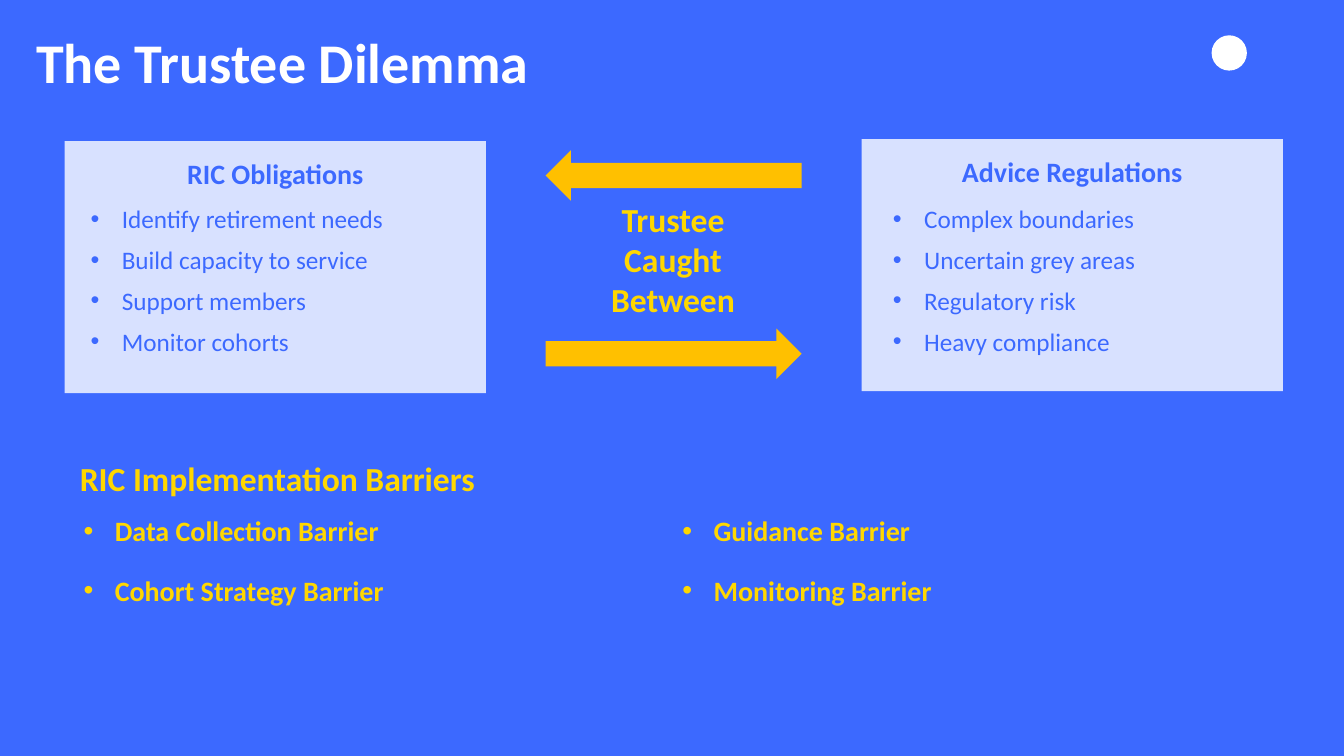
"""Build the slide on the trustee dilemma."""
from dataclasses import dataclass
from typing import NamedTuple

from lxml import etree
from pptx import Presentation
from pptx.dml.color import RGBColor
from pptx.enum.shapes import MSO_SHAPE
from pptx.enum.text import MSO_ANCHOR, MSO_AUTO_SIZE, PP_ALIGN
from pptx.oxml.ns import qn
from pptx.util import Inches, Pt

RECT, OVAL = MSO_SHAPE.RECTANGLE, MSO_SHAPE.OVAL
BACK, AHEAD = MSO_SHAPE.LEFT_ARROW, MSO_SHAPE.RIGHT_ARROW
LEFT, CENTER = PP_ALIGN.LEFT, PP_ALIGN.CENTER
TOP, FIXED = MSO_ANCHOR.TOP, MSO_AUTO_SIZE.NONE
WIDE, HIGH = Inches(13.33), Inches(7.5)
INDENT = Inches(0.31)


@dataclass(frozen=True)
class Theme:
    """Hold the colours, font and type sizes."""
    blue: str = "3C69FF"
    pale: str = "D8E1FF"
    white: str = "FFFFFF"
    gold: str = "FFD700"
    amber: str = "FFC000"
    font: str = "Calibri"
    title: float = 40
    head: float = 24
    label: float = 20
    body: float = 18


class Box(NamedTuple):
    """Give a place in percent of the slide's width and height."""
    x: float
    y: float
    w: float
    h: float

    def emu(self) -> tuple[int, ...]:
        """Turn the shares into slide units."""
        sides = (WIDE, HIGH, WIDE, HIGH)
        return tuple(round(side * part / 100) for side, part in zip(sides, self))


class Card(NamedTuple):
    """Describe a pale card with a heading and a list."""
    x: float
    y: float
    head: str
    items: tuple[str, ...]
    list_x: float
    list_w: float


class Arrow(NamedTuple):
    """Describe a block arrow by its kind and height on the slide."""
    kind: MSO_SHAPE
    y: float


THEME = Theme()
CARDS = (
    Card(4.8, 18.67, "RIC Obligations",
         ("Identify retirement needs", "Build capacity to service",
          "Support members", "Monitor cohorts"), 6, 28.9),
    Card(64.1, 18.4, "Advice Regulations",
         ("Complex boundaries", "Uncertain grey areas",
          "Regulatory risk", "Heavy compliance"), 65.7, 28.1),
)
ARROWS = (Arrow(BACK, 19.87), Arrow(AHEAD, 43.47))
BLOCKS = (("Data Collection Barrier", "Guidance Barrier"),
          ("Cohort Strategy Barrier", "Monitoring Barrier"))


def write(frame, *lines: str, size: float, color: str, bold: bool = False,
          align: PP_ALIGN = LEFT, after: float = 0, bullet: bool = False) -> None:
    """Fill a text frame with one paragraph for each line."""
    frame.word_wrap = True
    frame.auto_size = FIXED
    frame.vertical_anchor = TOP
    for index, line in enumerate(lines):
        para = frame.add_paragraph() if index else frame.paragraphs[0]
        para.text = line
        para.alignment = align
        para.space_after = Pt(after)
        for run in para.runs:
            font = run.font
            font.name, font.size, font.bold = THEME.font, Pt(size), bold
            font.color.rgb = RGBColor.from_string(color)
        if bullet:
            props = para._p.get_or_add_pPr()
            props.set("marL", str(INDENT))
            props.set("indent", str(-INDENT))
            etree.SubElement(props, qn("a:buFont"), typeface="Arial")
            etree.SubElement(props, qn("a:buChar"), char="•")


def label(slide, box: Box, *lines: str, **style) -> None:
    """Add a text box with formatted lines."""
    write(slide.shapes.add_textbox(*box.emu()).text_frame, *lines, **style)


def block(slide, kind: MSO_SHAPE, box: Box, color: str) -> None:
    """Add a flat filled shape."""
    shape = slide.shapes.add_shape(kind, *box.emu())
    shape.shadow.inherit = False
    shape.fill.solid()
    shape.fill.fore_color.rgb = RGBColor.from_string(color)
    shape.line.fill.background()


def add_title(slide, text: str) -> None:
    """Place and format the title."""
    title = slide.shapes.title
    title.left, title.top, title.width, title.height = Box(2.7, 4.67, 94.8, 7.33).emu()
    frame = title.text_frame
    frame.margin_left = frame.margin_top = frame.margin_right = frame.margin_bottom = 0
    write(frame, text, size=THEME.title, color=THEME.white, bold=True)
    frame.paragraphs[0].line_spacing = 0.9


def add_card(slide, card: Card) -> None:
    """Draw one card with its heading and list."""
    block(slide, RECT, Box(card.x, card.y, 31.35, 33.33), THEME.pale)
    label(slide, Box(card.x + 4.58, card.y + 1.4, 22.2, 5.87), card.head,
          size=THEME.label, color=THEME.blue, bold=True, align=CENTER)
    label(slide, Box(card.list_x, 26.27, card.list_w, 22), *card.items,
          size=THEME.body, color=THEME.blue, after=7.5, bullet=True)


def main() -> None:
    """Draw the slide and save it."""
    deck = Presentation()
    deck.slide_width, deck.slide_height = WIDE, HIGH
    slide = deck.slides.add_slide(deck.slide_layouts[5])
    slide.background.fill.solid()
    slide.background.fill.fore_color.rgb = RGBColor.from_string(THEME.blue)

    block(slide, OVAL, Box(90.15, 4.67, 2.63, 4.67), THEME.white)
    add_title(slide, "The Trustee Dilemma")
    for card in CARDS:
        add_card(slide, card)

    gold = {"color": THEME.gold, "bold": True}
    label(slide, Box(38.9, 25.6, 22.35, 17.47), "Trustee\vCaught\vBetween",
          size=THEME.head, align=CENTER, **gold)
    for arrow in ARROWS:
        block(slide, arrow.kind, Box(40.6, arrow.y, 19.05, 6.67), THEME.amber)

    label(slide, Box(5.2, 59.87, 50, 6.67), "RIC Implementation Barriers",
          size=THEME.head, **gold)
    for row, names in enumerate(BLOCKS):
        for col, name in enumerate(names):
            label(slide, Box(5.48 + 44.55 * col, 67.33 + 7.87 * row, 28.95, 5.87),
                  name, size=THEME.label, bullet=True, **gold)
    deck.save("out.pptx")


if __name__ == "__main__":
    main()
